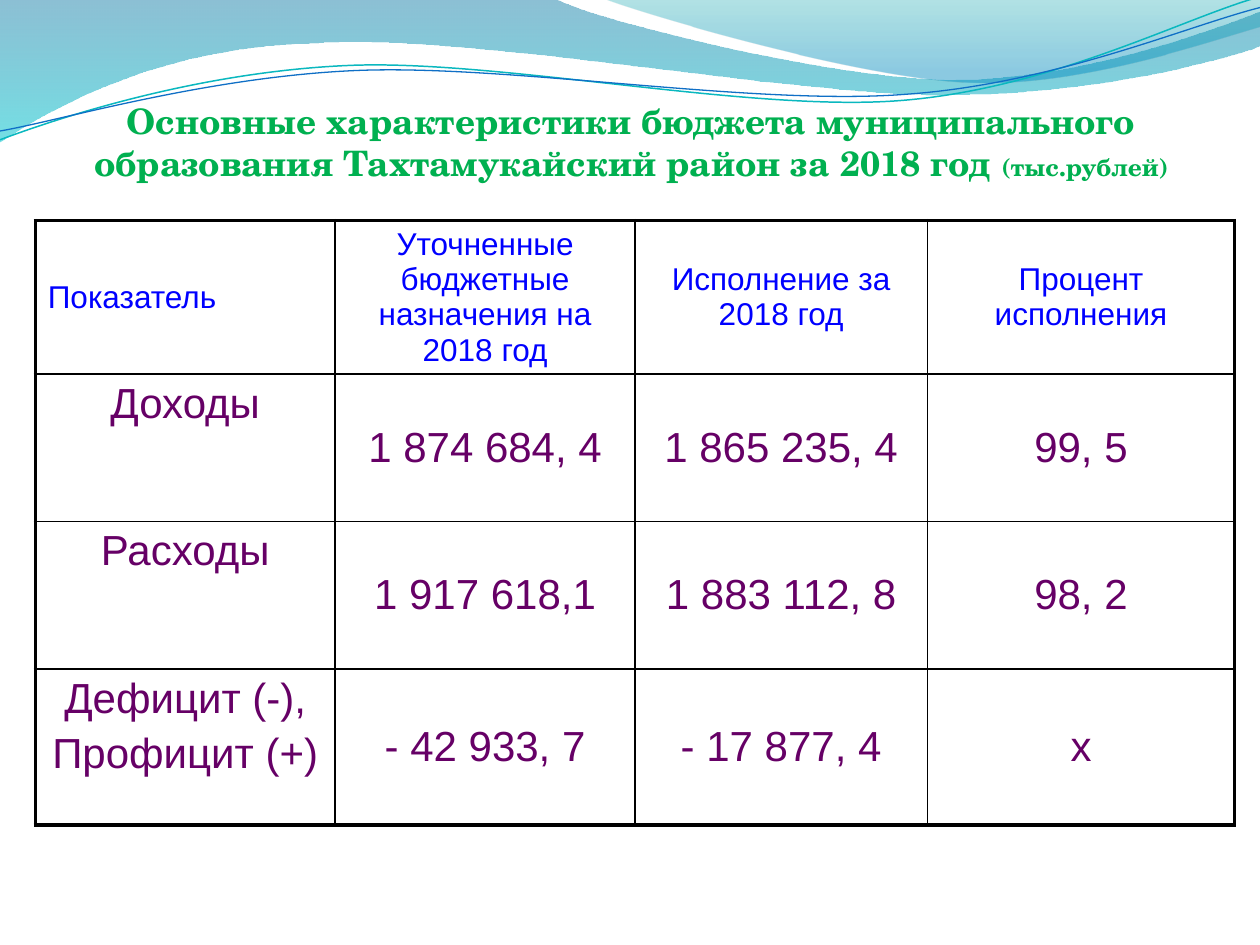
from dataclasses import dataclass

import lxml.etree
import pptx
import pptx.dml.color
import pptx.enum.text
import pptx.oxml
import pptx.oxml.ns
import pptx.util

W, H = 10, 7.5
UNITS = 1000  # outline units per inch, as outline points are whole numbers
Inches, Pt, qn = pptx.util.Inches, pptx.util.Pt, pptx.oxml.ns.qn
Align, Anchor = pptx.enum.text.PP_ALIGN, pptx.enum.text.MSO_ANCHOR
GREEN, BLUE, PURPLE, BLACK = "00B050", "0000FF", "660066", "000000"


@dataclass
class Stop:
    pos: int
    color: str
    opacity: int


@dataclass
class Wave:
    """Outline in inches: a segment of one point is a line, of three a curve."""
    start: tuple
    segments: list
    stops: tuple = ()
    line: str = ""
    width: float = 0


WAVES = [
    Wave((0, 0), [
        [(4.4, -0.01)],
        [(4.76, 0.17), (6.64, 0.63), (7.58, 0.63)],
        [(8.53, 0.63), (9.58, 0.26), (10, 0.09)],
        [(10.01, 0.36)],
        [(9.83, 0.44), (8.7, 0.76), (7.46, 0.75)],
        [(6.22, 0.75), (3.82, 0.28), (2.57, 0.34)],
        [(1.29, 0.36), (0.46, 0.83), (-0.01, 1.13)],
    ], stops=(Stop(0, "0074A1", 45), Stop(100, "00C6CF", 55))),
    Wave((4.79, -0.01), [
        [(5.09, 0.11), (6.82, 0.62), (7.69, 0.65)],
        [(8.56, 0.69), (9.61, 0.32), (10, 0.21)],
        [(10, 0)],
    ], stops=(Stop(0, "00A1A9", 30), Stop(80, "008BBF", 45))),
    Wave((0, 1.11), [
        [(0.48, 0.93), (1.58, 0.57), (2.77, 0.52)],
        [(3.95, 0.47), (5.93, 0.89), (7.13, 0.8)],
        [(8.33, 0.71), (9.38, 0.15), (9.98, -0.02)],
    ], line="0AB8BF", width=0.85),
    Wave((0, 1.04), [
        [(0.47, 0.96), (1.64, 0.61), (2.83, 0.56)],
        [(4.03, 0.51), (5.97, 0.84), (7.17, 0.75)],
        [(8.36, 0.67), (9.41, 0.21), (10, 0.06)],
    ], line="0F6FC6", width=0.75),
]

COLS = [2.38, 2.38, 2.32, 2.44]
ROWS = [1.17, 1.17, 1.17, 1.24]
BUDGET = [
    ["Показатель", "Уточненные бюджетные назначения на 2018 год",
     "Исполнение за 2018 год", "Процент исполнения"],
    ["Доходы", "1 874 684, 4", "1 865 235, 4", "99, 5"],
    ["Расходы", "1 917 618,1", "1 883 112, 8", "98, 2"],
    ["Дефицит (-),\nПрофицит (+)", "- 42 933, 7", "- 17 877, 4", "х"],
]


def rgb(color: str) -> pptx.dml.color.RGBColor:
    return pptx.dml.color.RGBColor.from_string(color)


def add_run(p, text: str, size: float, font: str, color: str, bold: bool = False) -> None:
    r = p.add_run()
    r.text = text
    r.font.size, r.font.name, r.font.bold = Pt(size), font, bold
    r.font.color.rgb = rgb(color)


def add_gradient(sp, stops: tuple) -> None:
    """Top-to-bottom gradient with see-through stops."""
    marks = "".join(
        f'<a:gs pos="{st.pos * 1000}"><a:srgbClr val="{st.color}">'
        f'<a:alpha val="{st.opacity * 1000}"/></a:srgbClr></a:gs>' for st in stops)
    fill = pptx.oxml.parse_xml(
        f'<a:gradFill {pptx.oxml.ns.nsdecls("a")} rotWithShape="1"><a:gsLst>{marks}</a:gsLst>'
        '<a:lin ang="5400000" scaled="0"/></a:gradFill>')
    sp._element.spPr.find(qn("a:custGeom")).addnext(fill)


def to_units(pt: tuple) -> tuple:
    return tuple(round(v * UNITS) for v in pt)


def add_wave(s, wave: Wave) -> None:
    points = [to_units(pt) for seg in wave.segments for pt in seg]
    builder = s.shapes.build_freeform(*to_units(wave.start), scale=Inches(1) / UNITS)
    builder.add_line_segments(points, close=bool(wave.stops))
    sp = builder.convert_to_shape()
    # Join each run of three points into one Bezier curve
    nodes = iter(list(sp._element.iter(qn("a:lnTo"))))
    for seg in wave.segments:
        steps = [next(nodes) for _ in seg]
        if len(seg) == 3:
            curve = lxml.etree.Element(qn("a:cubicBezTo"))
            steps[0].addprevious(curve)
            for step in steps:
                curve.append(step[0])
                step.getparent().remove(step)
    sp.shadow.inherit = False
    if wave.stops:
        sp.line.fill.background()
        add_gradient(sp, wave.stops)
    else:
        sp.fill.background()
        sp.line.color.rgb = rgb(wave.line)
        sp.line.width = Pt(wave.width)


def set_title(s) -> None:
    sp = s.shapes.title
    sp.left, sp.top, sp.width, sp.height = map(Inches, (0.51, 0.21, 0.9 * W, 1.25))
    tf = sp.text_frame
    tf.word_wrap, tf.vertical_anchor = True, Anchor.BOTTOM
    tf.auto_size = pptx.enum.text.MSO_AUTO_SIZE.NONE
    tf.margin_left = tf.margin_right = tf.margin_bottom = 0
    tf.margin_top = Inches(0.05)
    p = tf.paragraphs[0]
    p.alignment = Align.CENTER
    font = "TeX Gyre Schola"
    add_run(p, "Основные характеристики бюджета муниципального "
               "образования Тахтамукайский район за 2018 год ", 20, font, GREEN, True)
    add_run(p, "(тыс.рублей)", 14, font, GREEN, True)
    s.shapes._spTree.append(sp._element)  # in front of the waves


def set_borders(cell, outer: dict) -> None:
    """Thick lines on the outer sides of the table, thin ones inside."""
    tc_pr = cell._tc.get_or_add_tcPr()
    for i, (side, is_outer) in enumerate(outer.items()):
        ln = pptx.oxml.parse_xml(
            f'<a:{side} {pptx.oxml.ns.nsdecls("a")} w="{Pt(2.25 if is_outer else 1)}">'
            f'<a:solidFill><a:srgbClr val="{BLACK}"/></a:solidFill></a:{side}>')
        tc_pr.insert(i, ln)


def fill_cell(cell, text: str, row: int, col: int) -> None:
    size, color = (24, PURPLE) if row else (18, BLUE)
    cell.fill.background()
    cell.vertical_anchor = Anchor.TOP if row and not col else Anchor.MIDDLE
    tf = cell.text_frame
    for i, line in enumerate(text.split("\n")):
        p = tf.add_paragraph() if i else tf.paragraphs[0]
        p.alignment = Align.CENTER if row or col else Align.LEFT
        p.space_before = Pt(0.2 * size)
        add_run(p, line, size, "Arial", color)
    set_borders(cell, {"lnL": col == 0, "lnR": col == len(COLS) - 1,
                       "lnT": row == 0, "lnB": row == len(ROWS) - 1})


def add_budget_table(s) -> None:
    box = map(Inches, (0.28, 1.75, sum(COLS), sum(ROWS)))
    table = s.shapes.add_table(len(ROWS), len(COLS), *box).table
    table.first_row = table.horz_banding = False
    for column, width in zip(table.columns, COLS):
        column.width = Inches(width)
    for i, height in enumerate(ROWS):
        table.rows[i].height = Inches(height)
        for j, text in enumerate(BUDGET[i]):
            fill_cell(table.cell(i, j), text, i, j)


def main() -> None:
    prs = pptx.Presentation()
    prs.slide_width, prs.slide_height = Inches(W), Inches(H)
    s = prs.slides.add_slide(prs.slide_layouts[5])
    for wave in WAVES:
        add_wave(s, wave)
    set_title(s)
    add_budget_table(s)
    prs.save("out.pptx")


if __name__ == "__main__":
    main()
